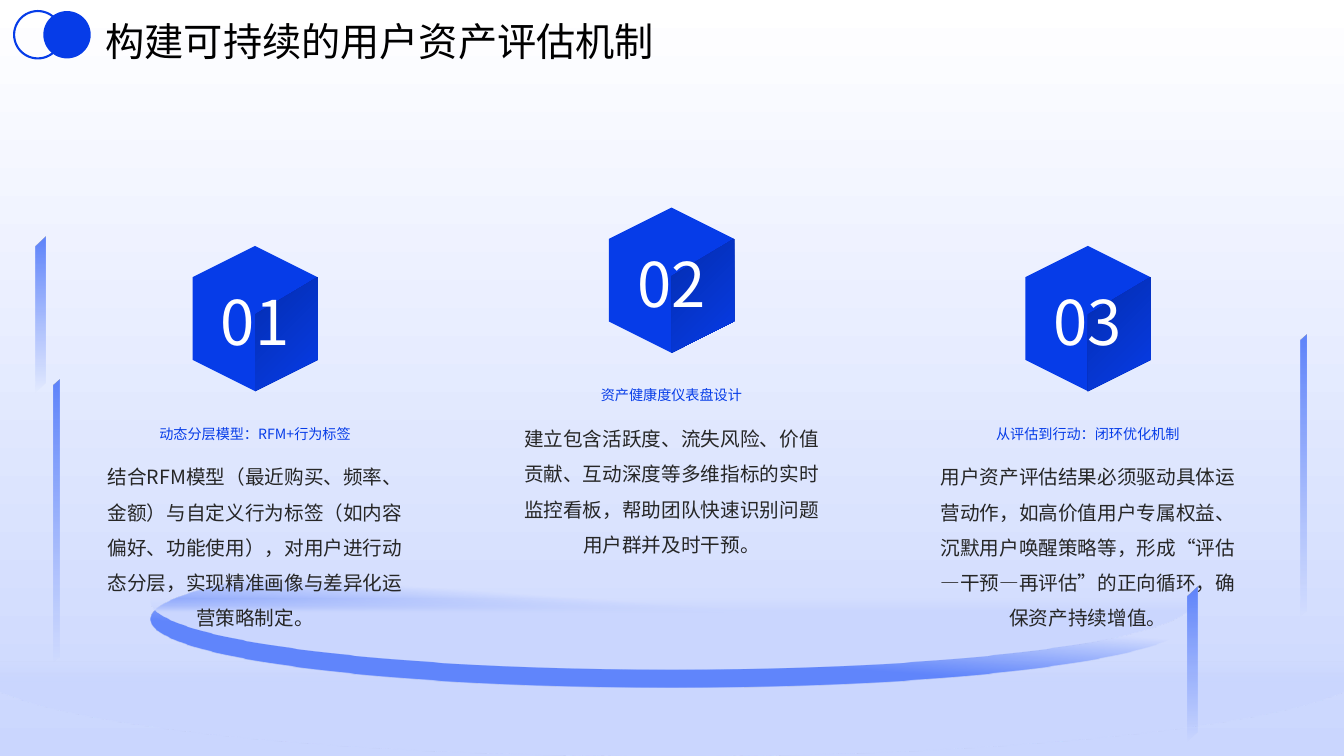
"""Build the slide about a sustainable user asset evaluation mechanism."""
from dataclasses import dataclass

from pptx import Presentation
from pptx.dml.color import RGBColor
from pptx.enum.shapes import MSO_SHAPE
from pptx.enum.text import MSO_ANCHOR, PP_ALIGN
from pptx.oxml import parse_xml
from pptx.oxml.ns import nsdecls, qn
from pptx.util import Inches, Pt


@dataclass(frozen=True)
class Theme:
    font: str = "Noto Sans CJK SC"
    primary: str = "063CE8"
    primary_dark: str = "052DAE"
    accent: str = "6085FB"
    pale: str = "CAD6FE"
    white: str = "FFFFFF"
    black: str = "000000"
    body_color: str = "262626"
    title_size: float = 28
    number_size: float = 44
    heading_size: float = 10.1
    body_size: float = 14
    outline: float = 1.5


class SlideBuilder:
    def __init__(self, slide, theme):
        self.slide = slide
        self.theme = theme

    def paint(self, shape, fill=None, line=None):
        shape.shadow.inherit = False
        if fill:
            shape.fill.solid()
            shape.fill.fore_color.rgb = RGBColor.from_string(fill)
        else:
            shape.fill.background()
        if line:
            shape.line.color.rgb = RGBColor.from_string(line)
            shape.line.width = Pt(self.theme.outline)
        else:
            shape.line.fill.background()

    def gradient(self, shape, stops, angle):
        self.paint(shape)
        stop_xml = "".join(
            f'<a:gs pos="{position * 1000}"><a:srgbClr val="{color}">'
            f'<a:alpha val="{opacity * 1000}"/></a:srgbClr></a:gs>'
            for position, color, opacity in stops
        )
        gradient_fill = parse_xml(
            f'<a:gradFill {nsdecls("a")} rotWithShape="1"><a:gsLst>{stop_xml}</a:gsLst>'
            f'<a:lin ang="{angle * 60000}" scaled="0"/></a:gradFill>'
        )
        properties = shape.element.spPr
        properties.replace(properties.find(qn("a:noFill")), gradient_fill)

    def preset(self, kind, left, top, width, height):
        return self.slide.shapes.add_shape(
            kind, Inches(left), Inches(top), Inches(width), Inches(height)
        )

    def gradient_shape(self, kind, box, stops, angle=90):
        shape = self.preset(kind, *box)
        self.gradient(shape, stops, angle)
        return shape

    def circle(self, left, top, size, fill=None, line=None):
        shape = self.preset(MSO_SHAPE.FLOWCHART_CONNECTOR, left, top, size, size)
        self.paint(shape, fill, line)

    def pillar(self, left, top, length, thickness):
        box = (left, top, length, thickness)
        stops = [(1, self.theme.accent, 100), (100, self.theme.accent, 0)]
        shape = self.gradient_shape(MSO_SHAPE.PARALLELOGRAM, box, stops, 0)
        shape.adjustments[0] = 1
        shape.rotation = 90
        shape.element.spPr.xfrm.set("flipV", "1")

    def polygon(self, shapes, left, top, points):
        corners = [(Inches(left + x), Inches(top + y)) for x, y in points]
        builder = shapes.build_freeform(*corners[0])
        builder.add_line_segments(corners[1:], close=True)
        return builder.convert_to_shape()

    def badge(self, left, top):
        group = self.slide.shapes.add_group_shape()
        hexagon = [(0.62, 0), (1.24, 0.31), (1.24, 1.13), (0.62, 1.44), (0, 1.13), (0, 0.31)]
        facet = [hexagon[1], hexagon[2], hexagon[3], (0.62, 0.68)]
        self.paint(self.polygon(group.shapes, left, top, hexagon), self.theme.primary)
        stops = [(0, self.theme.primary_dark, 100), (100, self.theme.primary, 100)]
        self.gradient(self.polygon(group.shapes, left, top, facet), stops, 45)

    def text(self, box, words, size, color, spacing,
             align=PP_ALIGN.CENTER, anchor=MSO_ANCHOR.MIDDLE):
        left, top, width, height = (Inches(length) for length in box)
        frame = self.slide.shapes.add_textbox(left, top, width, height).text_frame
        frame.word_wrap = True
        frame.vertical_anchor = anchor
        paragraph = frame.paragraphs[0]
        paragraph.alignment = align
        paragraph.line_spacing = spacing
        run = paragraph.add_run()
        run.text = words
        run.font.size = Pt(size)
        run.font.name = self.theme.font
        run.font.color.rgb = RGBColor.from_string(color)
        east_asian = parse_xml(f'<a:ea {nsdecls("a")} typeface="{self.theme.font}"/>')
        run.font._element.find(qn("a:latin")).addnext(east_asian)

    def column(self, left, top, number, heading, body):
        theme = self.theme
        self.badge(left, top)
        self.text((left - 1, top + 1.55, 3.24, 0.57), heading,
                  theme.heading_size, theme.primary, 1.3)
        self.text((left - 1, top + 2.01, 3.24, 1.92), body,
                  theme.body_size, theme.body_color, 1.5, anchor=MSO_ANCHOR.TOP)
        self.text((left - 0.21, top + 0.3, 1.66, 0.81), number,
                  theme.number_size, theme.white, 1.1)


COLUMNS = [
    (2.44, "动态分层模型：RFM+行为标签",
     "结合RFM模型（最近购买、频率、金额）与自定义行为标签（如内容偏好、功能使用），"
     "对用户进行动态分层，实现精准画像与差异化运营策略制定。"),
    (2.06, "资产健康度仪表盘设计",
     "建立包含活跃度、流失风险、价值贡献、互动深度等多维指标的实时监控看板，"
     "帮助团队快速识别问题用户群并及时干预。"),
    (2.44, "从评估到行动：闭环优化机制",
     "用户资产评估结果必须驱动具体运营动作，如高价值用户专属权益、沉默用户唤醒策略等，"
     "形成“评估—干预—再评估”的正向循环，确保资产持续增值。"),
]
PILLARS = [
    (-0.84, 5.14, 2.8, 0.06),
    (11.53, 4.69, 2.8, 0.06),
    (11.06, 6.54, 1.54, 0.1),
    (-0.37, 3.07, 1.54, 0.1),
]


def main():
    presentation = Presentation()
    presentation.slide_width = Inches(13.33)
    presentation.slide_height = Inches(7.5)
    slide = presentation.slides.add_slide(presentation.slide_layouts[6])
    theme = Theme()
    builder = SlideBuilder(slide, theme)

    builder.gradient_shape(MSO_SHAPE.RECTANGLE, (0, 0, 13.33, 7.5),
                           [(0, theme.white, 100), (100, theme.pale, 100)])
    builder.gradient_shape(MSO_SHAPE.OVAL, (-0.27, 5.73, 13.86, 1.77),
                           [(47, theme.pale, 0), (59, theme.pale, 100)])
    builder.gradient_shape(MSO_SHAPE.OVAL, (1.49, 5.46, 10.34, 1.36),
                           [(43, theme.accent, 0), (68, theme.accent, 100)], 94)
    builder.gradient_shape(MSO_SHAPE.OVAL, (1.49, 5.28, 10.34, 1.36),
                           [(43, theme.pale, 0), (48, theme.pale, 0), (58, theme.pale, 100)])

    for index, (top, heading, body) in enumerate(COLUMNS):
        builder.column(1.91 + 4.13 * index, top, f"{index + 1:02d}", heading, body)
    for pillar in PILLARS:
        builder.pillar(*pillar)

    builder.text((0.95, 0.11, 9.84, 0.49), "构建可持续的用户资产评估机制",
                 theme.title_size, theme.black, 1.2, PP_ALIGN.LEFT)
    builder.circle(0.43, 0.11, 0.47, fill=theme.primary)
    builder.circle(0.14, 0.11, 0.47, line=theme.primary)
    presentation.save("out.pptx")


if __name__ == "__main__":
    main()
